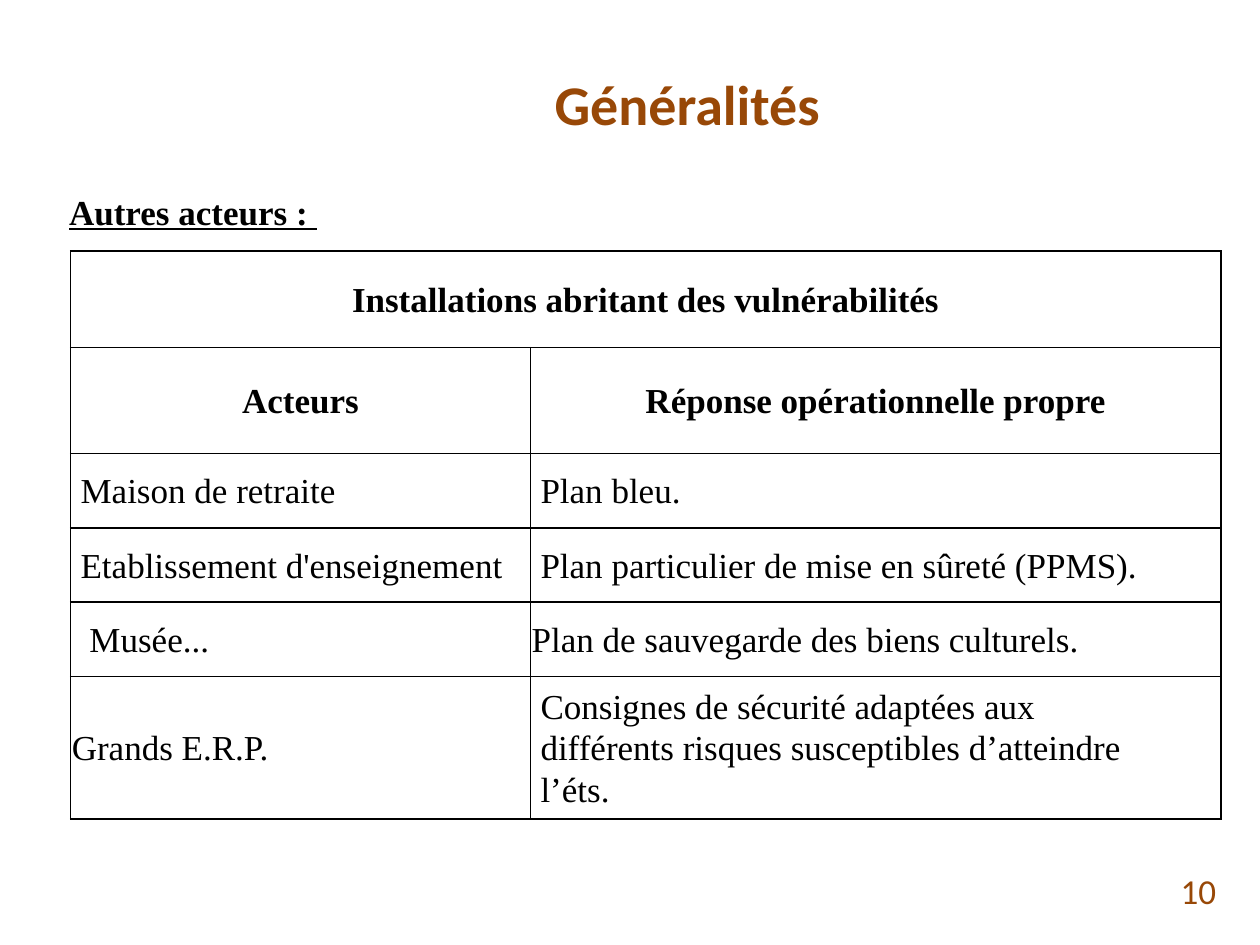
import pptx
import pptx.util
import pptx.dml.color
import pptx.enum.text
import lxml.etree

Inches = pptx.util.Inches
Align = pptx.enum.text.PP_ALIGN
Anchor = pptx.enum.text.MSO_ANCHOR
BROWN = pptx.dml.color.RGBColor(0x98, 0x48, 0x07)
BLACK = pptx.dml.color.RGBColor(0, 0, 0)
NS = "{http://schemas.openxmlformats.org/drawingml/2006/main}"
SERIF = "Times New Roman"


def format_text(frame, align, face, size, color, bold=False, line=None):
    for para in frame.paragraphs:
        para.alignment = align
        para.line_spacing = line
        for run in para.runs:
            run.font.name = face
            run.font.size = pptx.util.Pt(size)
            run.font.bold = bold
            run.font.color.rgb = color


def add_border(cell):
    props = cell._tc.get_or_add_tcPr()
    for side in ("lnL", "lnR", "lnT", "lnB"):
        line = lxml.etree.SubElement(props, NS + side, w="12700")
        fill = lxml.etree.SubElement(line, NS + "solidFill")
        lxml.etree.SubElement(fill, NS + "srgbClr", val=str(BLACK))


deck = pptx.Presentation()
deck.slide_width = Inches(10)
deck.slide_height = Inches(7.5)
slide = deck.slides.add_slide(deck.slide_layouts[5])

title = slide.shapes.title
title.left, title.top = Inches(1.22), Inches(0.3)
title.width, title.height = Inches(8.47), Inches(1.03)
title.text_frame.text = "Généralités"
title.text_frame.vertical_anchor = Anchor.MIDDLE
format_text(title.text_frame, Align.CENTER, "Calibri", 32, BROWN, True)

number = slide.shapes.add_textbox(Inches(7.42), Inches(6.87), Inches(2.33), Inches(0.4))
number.text_frame.word_wrap = True
number.text_frame.text = "10"
number.text_frame.vertical_anchor = Anchor.MIDDLE
format_text(number.text_frame, Align.RIGHT, "Calibri", 20, BROWN)

head = slide.shapes.add_textbox(Inches(0.45), Inches(1.44), Inches(8.96), Inches(0.44))
head.text_frame.word_wrap = True
head.text_frame.text = "Autres acteurs : "
format_text(head.text_frame, Align.JUSTIFY, SERIF, 20, BLACK, True, 1.07)
head.text_frame.paragraphs[0].runs[0].font.underline = True

rows = [
    ("Installations abritant des vulnérabilités", ""),
    ("Acteurs", "Réponse opérationnelle propre"),
    ("Maison de retraite", "Plan bleu."),
    ("Etablissement d'enseignement", "Plan particulier de mise en sûreté (PPMS)."),
    ("Musée...", "Plan de sauvegarde des biens culturels."),
    ("Grands E.R.P.", "Consignes de sécurité adaptées aux\n"
     "différents risques susceptibles d’atteindre\nl’éts."),
]
heights = [0.77, 0.84, 0.59, 0.59, 0.59, 1.13]
indents = [(0.01, 0.01), (0.01, 0.01), (0.08, 0.08), (0.08, 0.08), (0.15, 0.01), (0.01, 0.08)]

frame = slide.shapes.add_table(6, 2, Inches(0.56), Inches(1.99), Inches(9.13), Inches(4.51))
table = frame.table
table.first_row = False
table.horz_banding = False
table.columns[0].width = Inches(3.65)
table.columns[1].width = Inches(5.48)
table.cell(0, 0).merge(table.cell(0, 1))

for r, texts in enumerate(rows):
    table.rows[r].height = Inches(heights[r])
    for c, text in enumerate(texts):
        cell = table.cell(r, c)
        add_border(cell)
        cell.fill.background()
        cell.vertical_anchor = Anchor.MIDDLE
        cell.margin_left = Inches(indents[r][c])
        cell.margin_right = cell.margin_top = cell.margin_bottom = Inches(0.01)
        if text:
            cell.text_frame.text = text
        align = Align.CENTER if r < 2 else Align.LEFT if "\n" in text else Align.JUSTIFY
        format_text(cell.text_frame, align, SERIF, 20, BLACK, r < 2, 1.07)

deck.save("out.pptx")
